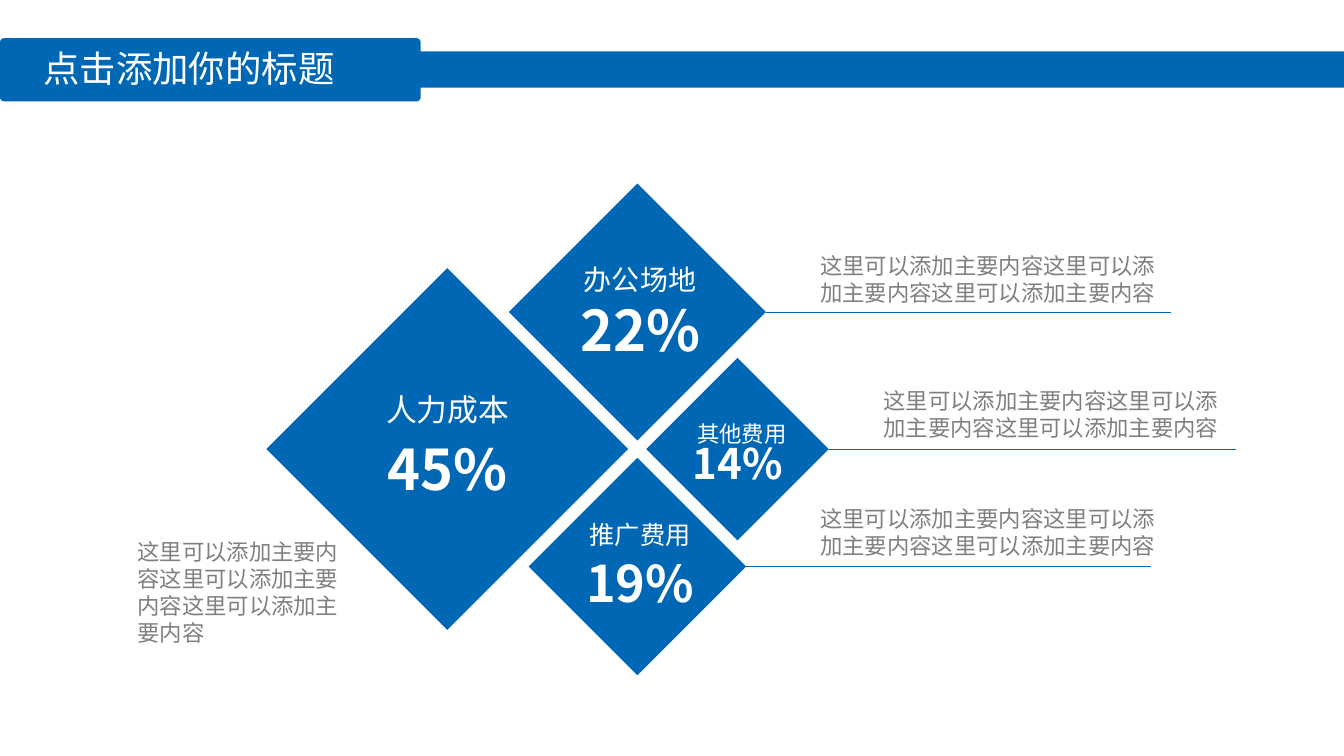
from lxml import etree
from pptx import Presentation
from pptx.dml.color import RGBColor
from pptx.enum import shapes, text
from pptx.oxml.ns import qn
from pptx.util import Pt

BLUE, WHITE, GRAY = "0067B4", "FFFFFF", "808080"
CJK = "Noto Sans CJK SC"
NOTE = "这里可以添加主要内容" * 3

prs = Presentation()
prs.slide_width, prs.slide_height = Pt(960), Pt(540)
s = prs.slides.add_slide(prs.slide_layouts[6])


def add_block(kind, x, y, w, h):
    sp = s.shapes.add_shape(kind, Pt(x), Pt(y), Pt(w), Pt(h))
    sp.shadow.inherit = False
    sp.fill.solid()
    sp.fill.fore_color.rgb = RGBColor.from_string(BLUE)
    sp.line.fill.background()
    return sp


def add_text(words, x, y, w, h, size, color=WHITE, name=CJK, bold=False, align=text.PP_ALIGN.CENTER):
    tf = s.shapes.add_textbox(Pt(x), Pt(y), Pt(w), Pt(h)).text_frame
    tf.word_wrap = True
    p = tf.paragraphs[0]
    p.alignment = align
    r = p.add_run()
    r.text = words
    for key, value in {"size": Pt(size), "name": name, "bold": bold}.items():
        setattr(r.font, key, value)
    r.font.color.rgb = RGBColor.from_string(color)
    etree.SubElement(r._r.get_or_add_rPr(), qn("a:ea"), typeface=CJK)


add_block(shapes.MSO_SHAPE.RECTANGLE, 13.7, 36.7, 946.3, 25.9)
tab = add_block(shapes.MSO_SHAPE.ROUNDED_RECTANGLE, 0, 27.2, 300.5, 45.2)
tab.adjustments[0] = 0.067
add_text("点击添加你的标题", 23.8, 29.5, 265, 38.9, 26, align=text.PP_ALIGN.LEFT)

costs = [
    ("人力成本", "45%", 319.5, 320.8, 129.2, 22, 40, 254.2, 275.8, 254.2, 306.7),
    ("办公场地", "22%", 455.3, 222.9, 91.8, 20, 40, 391.7, 183.6, 391.7, 207.4),
    ("推广费用", "19%", 455.3, 404.7, 77.7, 18, 36, 391.7, 367.2, 391.7, 391),
    ("其他费用", "14%", 526.8, 320.8, 65.2, 16, 30, 464.4, 296.6, 461.5, 308.9),
]
diamonds = [
    add_block(shapes.MSO_SHAPE.DIAMOND, cx - half, cy - half, 2 * half, 2 * half)
    for label, share, cx, cy, half, *rest in costs
]

for diamond, end_x in zip(diamonds[1:], (836.2, 822, 882.7)):
    y = diamond.top + diamond.height // 2
    line = s.shapes.add_connector(
        shapes.MSO_CONNECTOR.STRAIGHT, diamond.left + diamond.width, y, Pt(end_x), y)
    line.begin_connect(diamond, 3)
    line.line.color.rgb = RGBColor.from_string(BLUE)
    line.line.width = Pt(0.75)
    etree.SubElement(line._element.spPr, qn("a:effectLst"))

for label, share, cx, cy, half, size, share_size, x, y, share_x, share_y in costs:
    add_text(label, x, y, 131, size * 1.2 + 7.2, size)
    add_text(share, share_x, share_y, 131, share_size * 1.2 + 7.2, share_size, bold=True)

for x, y, w, h in [(578.9, 176.4, 259.2, 46.1), (624, 273.3, 259.2, 46.1),
                   (91.1, 380.9, 162.7, 85), (578.9, 357.1, 259.2, 46.1)]:
    add_text(NOTE, x, y, w, h, 16, GRAY, "Arial", align=text.PP_ALIGN.LEFT)

prs.save("out.pptx")
